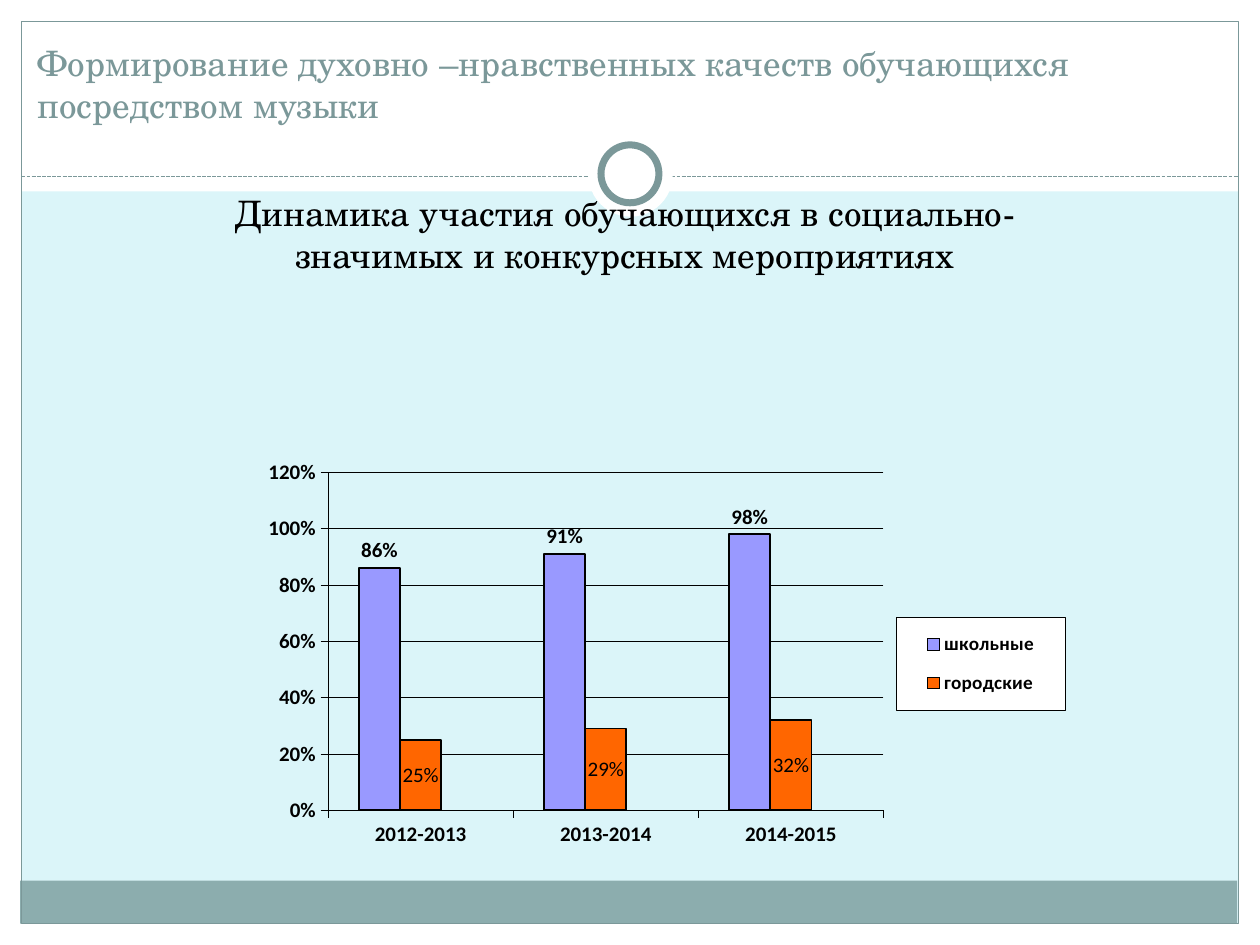
"""Build a slide with a column chart of pupils' participation in events."""
from dataclasses import dataclass
from typing import Optional

import pptx
import pptx.chart.data
import pptx.dml.color
import pptx.enum.chart
import pptx.enum.dml
import pptx.enum.shapes
import pptx.enum.text
import pptx.oxml
import pptx.oxml.ns
import pptx.util
from pptx.util import Inches

BLACK, WHITE, TEAL = "000000", "FFFFFF", "7B9899"
SERIF, SANS = "TeX Gyre Schola", "Calibri"
SHAPES = pptx.enum.shapes.MSO_SHAPE
CHART = pptx.enum.chart
ALIGN = pptx.enum.text.PP_ALIGN


@dataclass
class Panel:
    left: float
    top: float
    width: float
    height: float
    fill: Optional[str] = WHITE
    line: float = 0
    kind: int = SHAPES.RECTANGLE


@dataclass
class Series:
    name: str
    values: tuple
    color: str
    bold: bool
    position: int


FRAME = (
    Panel(0, 7.33, 10, 0.17),
    Panel(0, 0, 10, 1.52),
    Panel(0, 0, 0.17, 7.5),
    Panel(9.83, 0, 0.17, 7.5),
    Panel(0.16, 6.99, 9.66, 0.34, "8CADAE"),
    Panel(0.17, 0.17, 9.66, 7.16, None, 0.75),
)
RINGS = (
    Panel(4.67, 1.05, 0.67, 0.67, kind=SHAPES.OVAL),
    Panel(4.77, 1.15, 0.46, 0.46, line=4, kind=SHAPES.OVAL),
)
YEARS = ("2012-2013", "2013-2014", "2014-2015")
OUTSIDE = CHART.XL_LABEL_POSITION.OUTSIDE_END
SERIES = (
    Series("школьные", (0.86, 0.91, 0.98), "9999FF", True, OUTSIDE),
    Series("городские", (0.25, 0.29, 0.32), "FF6600", False, CHART.XL_LABEL_POSITION.CENTER),
    Series("Series 3", (None, None, None), "FFFFCC", True, OUTSIDE),
)


def rgb(value: str):
    return pptx.dml.color.RGBColor.from_string(value)


def set_fill(fill, color: str) -> None:
    fill.solid()
    fill.fore_color.rgb = rgb(color)


def set_line(line, color: str, width: float) -> None:
    set_fill(line.fill, color)
    line.width = pptx.util.Pt(width)


def set_font(font, size: float, color: str = BLACK, name: str = SANS, bold: bool = False) -> None:
    font.size = pptx.util.Pt(size)
    font.color.rgb = rgb(color)
    font.name = name
    font.bold = bold


def add_panel(page, panel: Panel) -> None:
    shape = page.shapes.add_shape(panel.kind, Inches(panel.left), Inches(panel.top),
                                  Inches(panel.width), Inches(panel.height))
    shape.shadow.inherit = False
    if panel.fill:
        set_fill(shape.fill, panel.fill)
    else:
        shape.fill.background()
    if panel.line:
        set_line(shape.line, TEAL, panel.line)
    else:
        shape.line.fill.background()


def add_divider(page) -> None:
    divider = page.shapes.add_connector(pptx.enum.shapes.MSO_CONNECTOR.STRAIGHT,
                                        Inches(0.17), Inches(1.4), Inches(9.83), Inches(1.4))
    set_line(divider.line, TEAL, 0.75)
    divider.line.dash_style = pptx.enum.dml.MSO_LINE.SQUARE_DOT
    properties = divider._element.spPr
    properties.append(properties.makeelement(pptx.oxml.ns.qn("a:effectLst")))


def add_text(page, text: str, *, left: float, top: float, width: float, height: float,
             color: str, align, inset: float) -> None:
    box = page.shapes.add_textbox(Inches(left), Inches(top), Inches(width), Inches(height))
    frame = box.text_frame
    frame.word_wrap = True
    frame.margin_top = Inches(inset)
    para = frame.paragraphs[0]
    para.alignment = align
    span = para.add_run()
    span.text = text
    set_font(span.font, 20, color, SERIF)


def chart_xml(text: str):
    start, rest = text.split(">", 1)
    return pptx.oxml.parse_xml(f"{start} {pptx.oxml.ns.nsdecls('c', 'a')}>{rest}")


def place(element, index: int, left: float, top: float, width: float, height: float,
          target: str = "") -> None:
    for old in element.findall(pptx.oxml.ns.qn("c:layout")):
        element.remove(old)
    sizes = zip("xywh", (left, top, width, height))
    values = "".join(f'<c:{key} val="{value}"/>' for key, value in sizes)
    modes = '<c:xMode val="edge"/><c:yMode val="edge"/>'
    element.insert(index, chart_xml(
        f"<c:layout><c:manualLayout>{target}{modes}{values}</c:manualLayout></c:layout>"))


def style_axis(axis) -> None:
    axis.major_tick_mark = CHART.XL_TICK_MARK.OUTSIDE
    axis.minor_tick_mark = CHART.XL_TICK_MARK.NONE
    set_font(axis.tick_labels.font, 12, bold=True)
    set_line(axis.format.line, BLACK, 0.25)


def style_legend(chart) -> None:
    chart.has_legend = True
    legend = chart.legend
    legend.position = CHART.XL_LEGEND_POSITION.RIGHT
    legend.include_in_layout = False
    set_font(legend.font, 11, bold=True)
    element = legend._element
    place(element, 1, 0.79, 0.39, 0.21, 0.24)
    element.insert(1, chart_xml(
        '<c:legendEntry><c:idx val="2"/><c:delete val="1"/></c:legendEntry>'))
    element.find(pptx.oxml.ns.qn("c:txPr")).addprevious(chart_xml(
        f'<c:spPr><a:solidFill><a:srgbClr val="{WHITE}"/></a:solidFill>'
        f'<a:ln w="3175"><a:solidFill><a:srgbClr val="{BLACK}"/></a:solidFill></a:ln></c:spPr>'))


def add_participation_chart(page) -> None:
    data = pptx.chart.data.CategoryChartData(number_format="0%")
    data.categories = YEARS
    for series in SERIES:
        data.add_series(series.name, series.values)
    chart = page.shapes.add_chart(CHART.XL_CHART_TYPE.COLUMN_CLUSTERED, Inches(2.06),
                                  Inches(3.65), Inches(6.4), Inches(3.13), data).chart
    chart.has_title = False
    set_font(chart.font, 12, bold=True)
    plot = chart.plots[0]
    plot.gap_width, plot.overlap, plot.vary_by_categories = 150, 0, False
    for series, columns in zip(SERIES, plot.series):
        set_fill(columns.format.fill, series.color)
        set_line(columns.format.line, BLACK, 1)
        labels = columns.data_labels
        labels.show_value = True
        labels.number_format, labels.number_format_is_linked = "0%", False
        labels.position = series.position
        set_font(labels.font, 12, bold=series.bold)
    style_axis(chart.category_axis)
    chart.category_axis.tick_label_position = CHART.XL_TICK_LABEL_POSITION.LOW
    axis = chart.value_axis
    style_axis(axis)
    axis.minimum_scale, axis.maximum_scale, axis.major_unit = 0, 1.2, 0.2
    axis.tick_labels.number_format, axis.tick_labels.number_format_is_linked = "0%", False
    set_line(axis.major_gridlines.format.line, BLACK, 0.25)
    style_legend(chart)
    place(chart._chartSpace.chart.plotArea, 0, 0.085, 0.017, 0.689, 0.87,
          '<c:layoutTarget val="inner"/>')


def main() -> None:
    deck = pptx.Presentation()
    deck.slide_width, deck.slide_height = Inches(10), Inches(7.5)
    page = deck.slides.add_slide(deck.slide_layouts[6])
    set_fill(page.background.fill, "DBF5F9")
    for panel in FRAME:
        add_panel(page, panel)
    add_divider(page)
    for ring in RINGS:
        add_panel(page, ring)
    add_text(page, "Формирование духовно –нравственных качеств обучающихся посредством музыки",
             left=0.2, top=0.21, width=9.64, height=1.25, color=TEAL, align=ALIGN.LEFT, inset=0.12)
    add_text(page, "Динамика участия обучающихся в социально-значимых и конкурсных мероприятиях",
             left=1.46, top=1.15, width=7, height=3.8, color=BLACK, align=ALIGN.CENTER, inset=0.37)
    add_participation_chart(page)
    deck.save("out.pptx")


if __name__ == "__main__":
    main()
